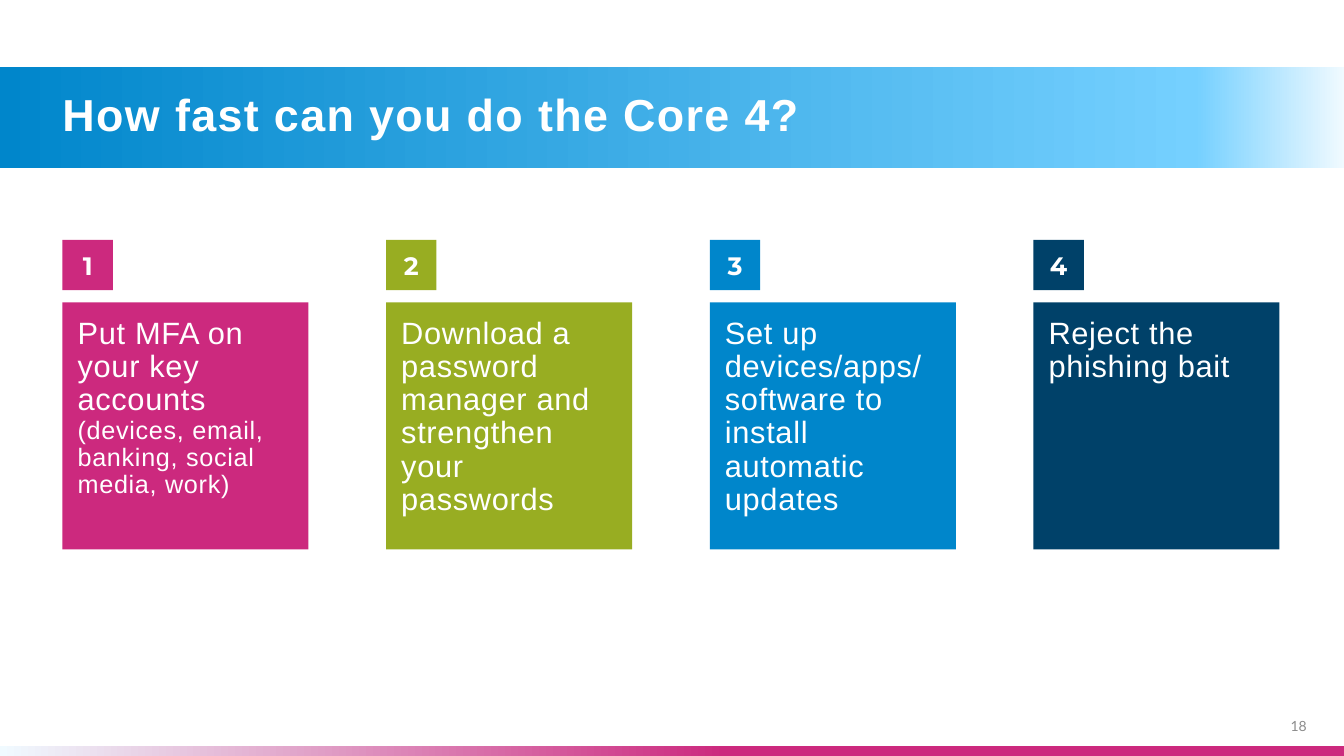
import lxml.etree
import pptx
import pptx.dml.color
import pptx.enum.shapes
import pptx.enum.text
import pptx.oxml.ns
import pptx.util

Inches = pptx.util.Inches
Pt = pptx.util.Pt
RGBColor = pptx.dml.color.RGBColor
ALIGN = pptx.enum.text.PP_ALIGN
ANCHOR = pptx.enum.text.MSO_ANCHOR
qn = pptx.oxml.ns.qn

WHITE = RGBColor(0xFF, 0xFF, 0xFF)
GREY = RGBColor(0x8C, 0x8C, 0x8C)
PALE = RGBColor(0xF0, 0xFA, 0xFF)
SKY = RGBColor(0x75, 0xD0, 0xFF)
BLUE = RGBColor(0x00, 0x86, 0xCB)
PINK = RGBColor(0xCC, 0x29, 0x7E)
GREEN = RGBColor(0x98, 0xAD, 0x22)
NAVY = RGBColor(0x00, 0x41, 0x69)

WIDTH, HEIGHT = 13.33, 7.5
LEFT, COLUMN_STEP = 0.62, 3.21
BADGE_TOP, BADGE_SIZE = 2.38, 0.5
CARD_TOP, CARD_WIDTH, CARD_HEIGHT = 3, 2.44, 2.45

STEPS = [
    (PINK, "Put MFA on your key accounts ",
     "(devices, email, banking, social media, work)"),
    (GREEN, "Download a password manager and strengthen your passwords", ""),
    (BLUE, "Set up devices/apps/\nsoftware to install automatic updates", ""),
    (NAVY, "Reject the phishing bait", ""),
]


def add_block(page, left, top, width, height, color=None):
    """Add a plain rectangle without line or shadow."""
    block = page.shapes.add_shape(
        pptx.enum.shapes.MSO_SHAPE.RECTANGLE,
        Inches(left), Inches(top), Inches(width), Inches(height))
    block.shadow.inherit = False
    block.line.fill.background()
    if color is not None:
        block.fill.solid()
        block.fill.fore_color.rgb = color
    return block


def add_gradient_bar(page, top, height, stops, angle):
    bar = add_block(page, 0, top, WIDTH, height)
    bar.fill.gradient()
    gradient = bar.fill._xPr.find(qn("a:gradFill"))
    stop_list = gradient.find(qn("a:gsLst"))
    for stop in list(stop_list):
        stop_list.remove(stop)
    for percent, color in stops:
        stop = lxml.etree.SubElement(stop_list, qn("a:gs"), pos=str(percent * 1000))
        lxml.etree.SubElement(stop, qn("a:srgbClr"), val=str(color))
    bar.fill.gradient_angle = angle


def add_text_box(page, left, top, width, height):
    return page.shapes.add_textbox(
        Inches(left), Inches(top), Inches(width), Inches(height))


def write(box, text, font, size, color=WHITE, bold=False,
          align=ALIGN.LEFT, anchor=ANCHOR.MIDDLE, margin=0):
    """Fill the box with one paragraph and return it."""
    frame = box.text_frame
    frame.word_wrap = True
    frame.vertical_anchor = anchor
    frame.margin_left = frame.margin_right = Inches(margin)
    frame.margin_top = frame.margin_bottom = Inches(margin)
    para = frame.paragraphs[0]
    para.text = text
    para.alignment = align
    para.font.name = font
    para.font.size = Pt(size)
    para.font.bold = bold
    para.font.color.rgb = color
    return para


def space_letters(para, points):
    for span in para.runs:
        span._r.get_or_add_rPr().set("spc", str(int(points * 100)))


def add_text_shadow(span):
    effects = lxml.etree.SubElement(span._r.get_or_add_rPr(), qn("a:effectLst"))
    shadow = lxml.etree.SubElement(
        effects, qn("a:outerShdw"), blurRad=str(Pt(4)), dist=str(Pt(3)),
        dir="2700000", algn="tl", rotWithShape="0")
    color = lxml.etree.SubElement(shadow, qn("a:srgbClr"), val="000000")
    lxml.etree.SubElement(color, qn("a:alpha"), val="43000")


def add_title(page, text):
    box = add_text_box(page, LEFT, 0.87, 11.5, 0.59)
    para = write(box, text, "Arial", 32, bold=True)
    para.line_spacing = 0.9
    space_letters(para, 1)
    add_text_shadow(para.runs[0])


def add_page_number(page, number):
    box = add_text_box(page, 12.42, 6.89, 0.54, 0.4)
    write(box, number, "Lato", 10, GREY, align=ALIGN.RIGHT, anchor=ANCHOR.BOTTOM)


def add_step(page, index, color, text, detail):
    """Add a numbered badge with its card below."""
    left = LEFT + index * COLUMN_STEP
    badge = add_block(page, left, BADGE_TOP, BADGE_SIZE, BADGE_SIZE, color)
    write(badge, str(index + 1), "Montserrat", 18, bold=True, align=ALIGN.CENTER)
    card = add_block(page, left, CARD_TOP, CARD_WIDTH, CARD_HEIGHT, color)
    para = write(card, text, "Arial", 22, anchor=ANCHOR.TOP, margin=0.15)
    para.line_spacing = 0.9
    if detail:
        span = para.add_run()
        span.text = detail
        span.font.size = Pt(18)
    space_letters(para, 0.5)


def main():
    deck = pptx.Presentation()
    deck.slide_width = Inches(WIDTH)
    deck.slide_height = Inches(HEIGHT)
    page = deck.slides.add_slide(deck.slide_layouts[6])
    add_gradient_bar(page, 0.66, 1.01, [(0, PALE), (11, SKY), (100, BLUE)], 180)
    add_gradient_bar(page, 7.4, 0.1, [(0, PALE), (54, PINK)], 0)
    add_page_number(page, "18")
    add_title(page, "How fast can you do the Core 4?")
    for index, step in enumerate(STEPS):
        add_step(page, index, *step)
    deck.save("out.pptx")


if __name__ == "__main__":
    main()
